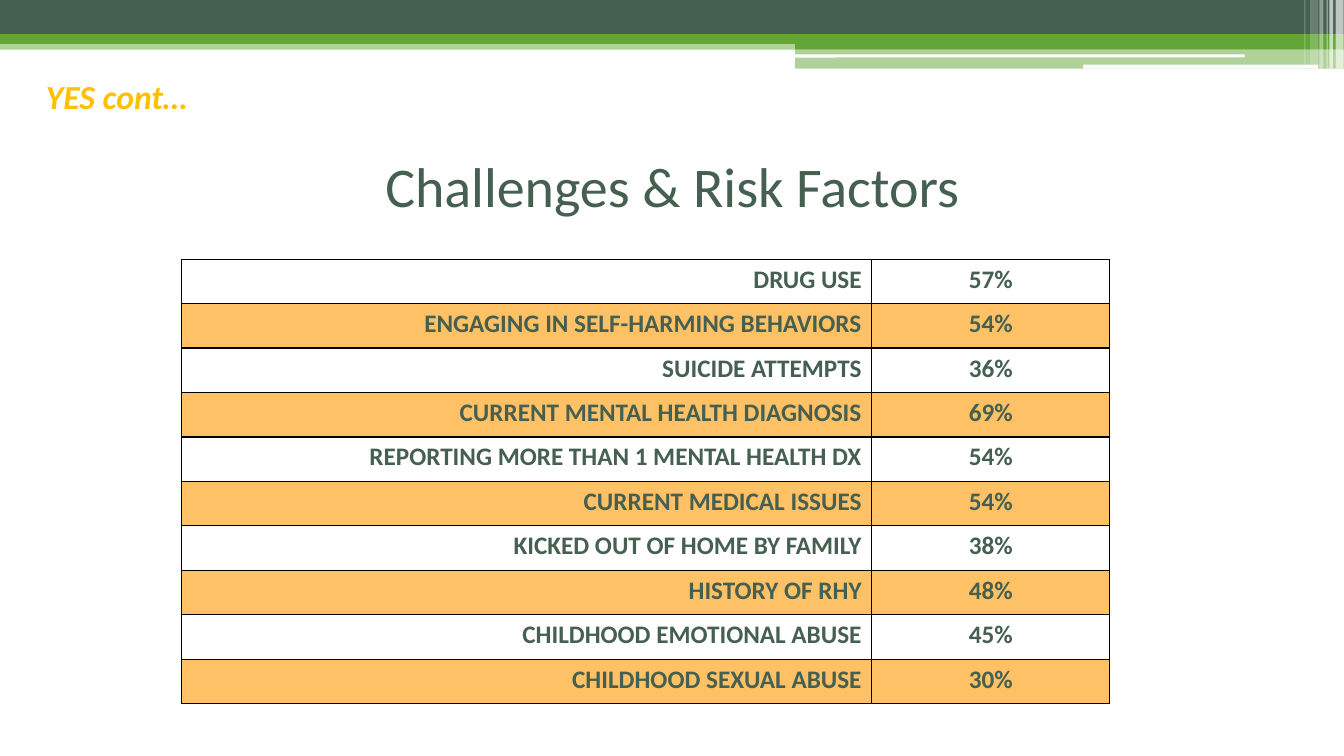
from pptx import Presentation
from pptx.dml.color import RGBColor
from pptx.enum.shapes import MSO_SHAPE
from pptx.enum.text import MSO_ANCHOR, MSO_AUTO_SIZE, PP_ALIGN
from pptx.oxml.ns import qn
from pptx.util import Cm, Pt
from lxml.etree import SubElement

TITLE = "Challenges & Risk Factors"
SECTION = "YES cont…"
RISK_FACTORS = [
    ("DRUG USE", "57%"),
    ("ENGAGING IN SELF-HARMING BEHAVIORS", "54%"),
    ("SUICIDE ATTEMPTS", "36%"),
    ("CURRENT MENTAL HEALTH DIAGNOSIS", "69%"),
    ("REPORTING MORE THAN 1 MENTAL HEALTH DX", "54%"),
    ("CURRENT MEDICAL ISSUES", "54%"),
    ("KICKED OUT OF HOME BY FAMILY", "38%"),
    ("HISTORY OF RHY", "48%"),
    ("CHILDHOOD EMOTIONAL ABUSE", "45%"),
    ("CHILDHOOD SEXUAL ABUSE", "30%"),
]

FONT = "Calibri"
DARK, GREEN, WHITE = "455F51", "63A537", "FFFFFF"
AMBER, GOLD, BLACK = "FFC165", "FFC000", "000000"
SLIDE_WIDTH, SLIDE_HEIGHT = 33.87, 19.05
HALF_LEFT = 20.04
HALF_WIDTH = SLIDE_WIDTH - HALF_LEFT

BANDS = [
    (0, 1.02, SLIDE_WIDTH, 0.23, GREEN, 50),
    (0, 0, SLIDE_WIDTH, 0.86, DARK, 100),
    (0, 0.86, SLIDE_WIDTH, 0.25, GREEN, 100),
    (HALF_LEFT, 0.99, HALF_WIDTH, 0.25, GREEN, 100),
    (HALF_LEFT, 1.22, HALF_WIDTH, 0.51, GREEN, 50),
]
HIGHLIGHTS = [
    (20.02, 1.37, 11.35, 0.08, WHITE, 100),
    (27.3, 1.63, 5.92, 0.1, WHITE, 100),
]
STRIPES = [
    (33.66, 0, 0.2, 1.73, WHITE, 65),
    (33.5, 0, 0.1, 1.73, WHITE, 65),
    (33.43, 0, 0.03, 1.73, WHITE, 60),
    (33.25, 0, 0.1, 1.73, WHITE, 40),
    (33.02, 0, 0.2, 1.63, WHITE, 20),
    (32.87, 0, 0.03, 1.63, WHITE, 30),
]
COLUMN_WIDTHS = (17.4, 6.0)
COLUMN_ALIGNMENTS = (PP_ALIGN.RIGHT, PP_ALIGN.CENTER)
ROW_HEIGHT = 1.12


def rgb(color):
    return RGBColor.from_string(color)


def write(text_frame, text, size, color, alignment, bold=False, italic=False):
    text_frame.text = text
    paragraph = text_frame.paragraphs[0]
    paragraph.alignment = alignment
    font = paragraph.runs[0].font
    font.name, font.size = FONT, Pt(size)
    font.bold, font.italic = bold, italic
    font.color.rgb = rgb(color)


def add_bar(slide, preset, left, top, width, height, color, opacity):
    bar = slide.shapes.add_shape(preset, Cm(left), Cm(top), Cm(width), Cm(height))
    bar.shadow.inherit = False
    bar.line.fill.background()
    bar.fill.solid()
    bar.fill.fore_color.rgb = rgb(color)
    if opacity < 100:
        tint = bar.fill._xPr.find(qn("a:solidFill"))[0]
        SubElement(tint, qn("a:alpha")).set("val", str(opacity * 1000))


def add_borders(cell):
    properties = cell._tc.get_or_add_tcPr()
    for side in ("a:lnL", "a:lnR", "a:lnT", "a:lnB"):
        border = SubElement(properties, qn(side))
        border.set("w", str(Pt(1)))
        solid = SubElement(border, qn("a:solidFill"))
        SubElement(solid, qn("a:srgbClr")).set("val", BLACK)


def add_header(slide):
    groups = (
        (MSO_SHAPE.RECTANGLE, BANDS),
        (MSO_SHAPE.ROUNDED_RECTANGLE, HIGHLIGHTS),
        (MSO_SHAPE.RECTANGLE, STRIPES),
    )
    for preset, bars in groups:
        for bar in bars:
            add_bar(slide, preset, *bar)


def add_headings(slide):
    title = slide.shapes.title
    title.left, title.top, title.width, title.height = Cm(1.7), Cm(3.18), Cm(30.48), Cm(2.97)
    title.text_frame.vertical_anchor = MSO_ANCHOR.MIDDLE
    title.text_frame.auto_size = MSO_AUTO_SIZE.NONE
    write(title.text_frame, TITLE, 40, DARK, PP_ALIGN.CENTER)

    section = slide.shapes.add_textbox(Cm(0.91), Cm(1.78), Cm(9.9), Cm(1.28))
    section.text_frame.word_wrap = True
    section.text_frame.auto_size = MSO_AUTO_SIZE.SHAPE_TO_FIT_TEXT
    write(section.text_frame, SECTION, 24, GOLD, PP_ALIGN.LEFT, bold=True, italic=True)


def add_risk_table(slide):
    count = len(RISK_FACTORS)
    table = slide.shapes.add_table(
        count, len(COLUMN_WIDTHS), Cm(4.57), Cm(6.53),
        Cm(sum(COLUMN_WIDTHS)), Cm(ROW_HEIGHT * count),
    ).table
    table.first_row = table.horz_banding = False
    for column, width in zip(table.columns, COLUMN_WIDTHS):
        column.width = Cm(width)
    for row_index, risk_factor in enumerate(RISK_FACTORS):
        table.rows[row_index].height = Cm(ROW_HEIGHT)
        for column_index, text in enumerate(risk_factor):
            cell = table.cell(row_index, column_index)
            add_borders(cell)
            cell.fill.solid()
            cell.fill.fore_color.rgb = rgb(AMBER if row_index % 2 else WHITE)
            write(cell.text_frame, text, 18, DARK, COLUMN_ALIGNMENTS[column_index], bold=True)


def main():
    presentation = Presentation()
    presentation.slide_width, presentation.slide_height = Cm(SLIDE_WIDTH), Cm(SLIDE_HEIGHT)
    slide = presentation.slides.add_slide(presentation.slide_layouts[5])
    add_header(slide)
    add_headings(slide)
    add_risk_table(slide)
    presentation.save("out.pptx")


if __name__ == "__main__":
    main()
